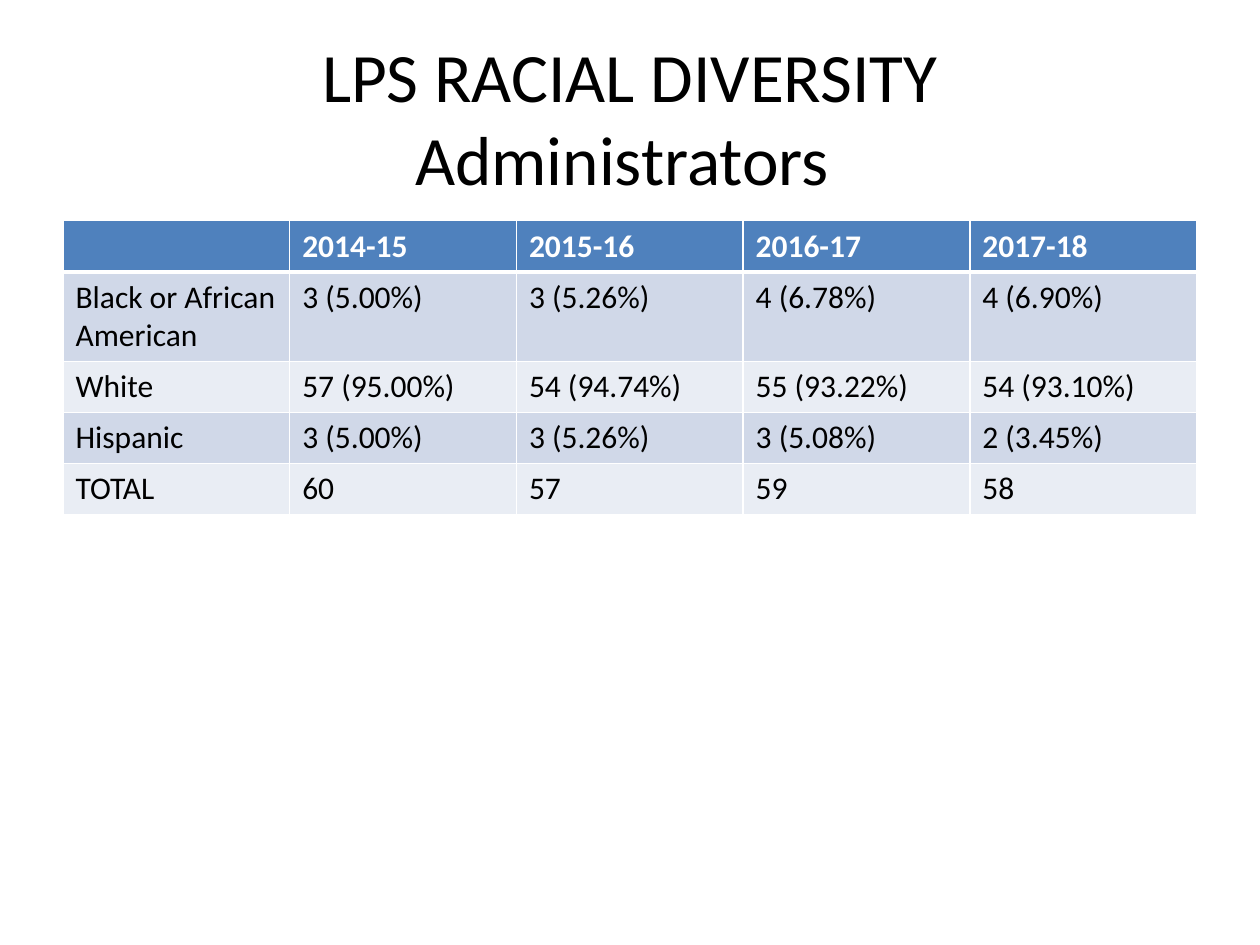
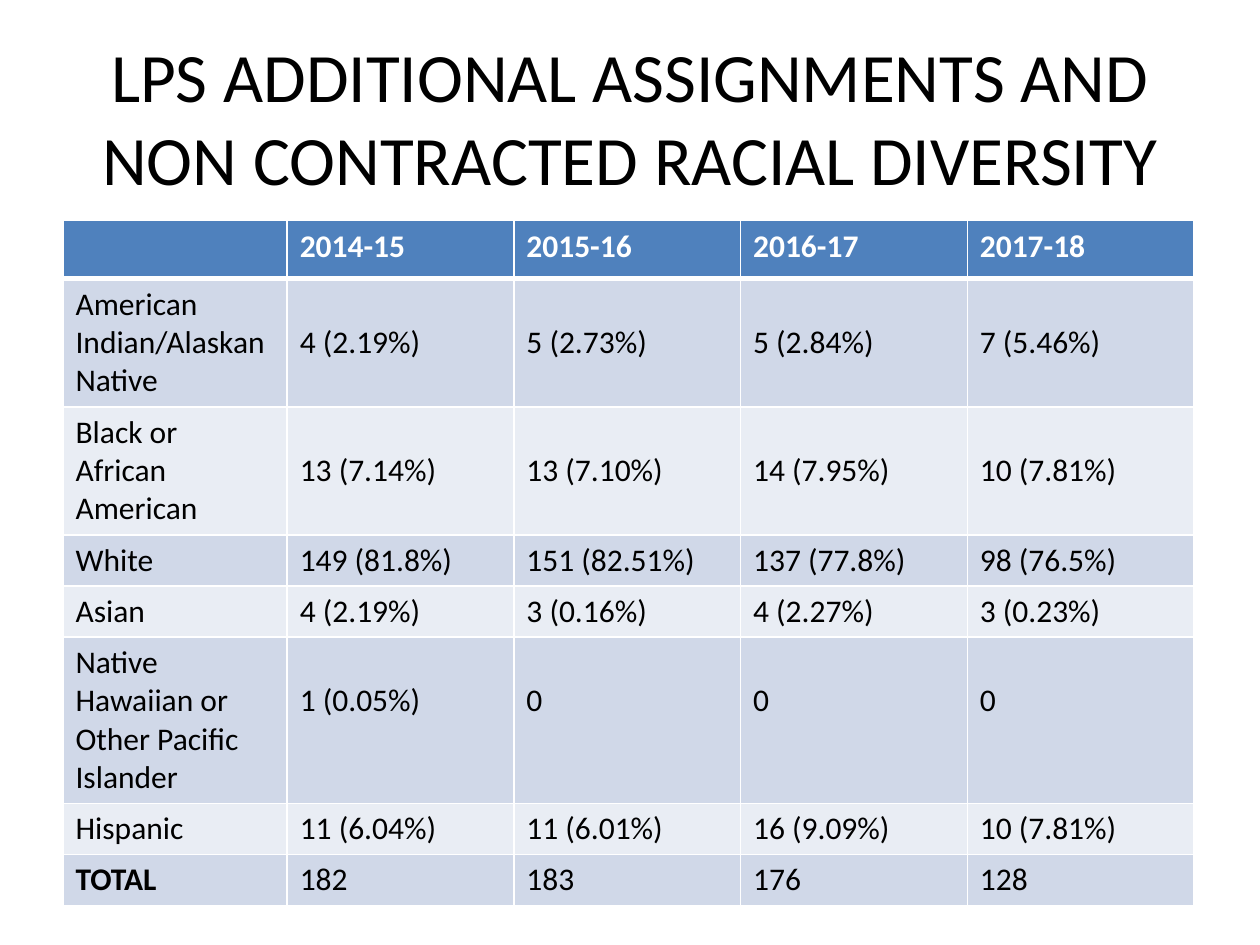
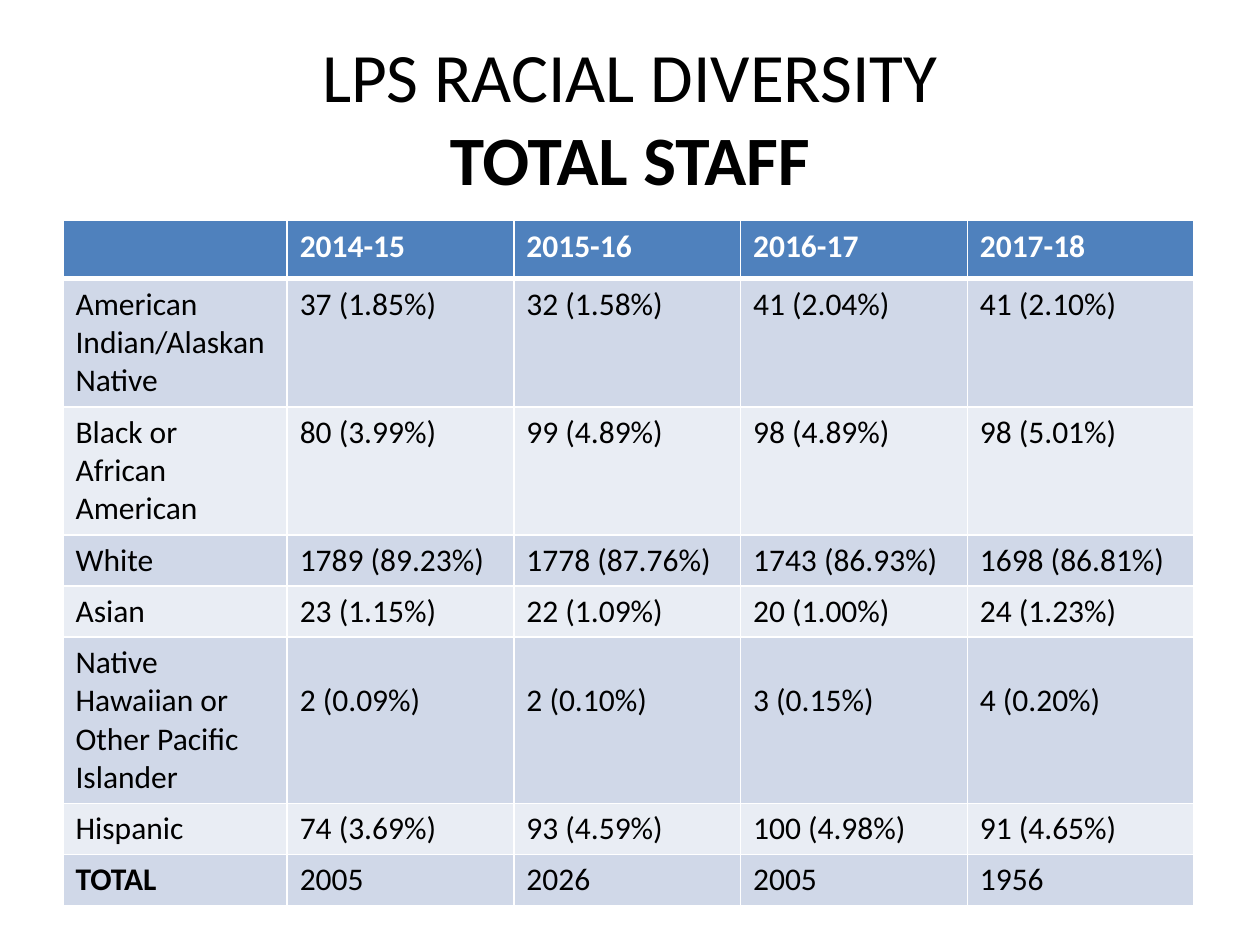
"""Build three slides of staff racial diversity tables."""
from dataclasses import dataclass

from lxml import etree
from pptx import Presentation
from pptx.dml.color import RGBColor
from pptx.enum.text import MSO_ANCHOR, MSO_AUTO_SIZE, PP_ALIGN
from pptx.oxml.ns import qn
from pptx.util import Cm, Pt


@dataclass(frozen=True)
class Theme:
    font: str = "Calibri"
    title_size: Pt = Pt(39.6)
    table_size: Pt = Pt(18)
    ink: RGBColor = RGBColor(0x00, 0x00, 0x00)
    white: RGBColor = RGBColor(0xFF, 0xFF, 0xFF)
    header: RGBColor = RGBColor(0x4F, 0x81, 0xBD)
    band_dark: RGBColor = RGBColor(0xD0, 0xD8, 0xE8)
    band_light: RGBColor = RGBColor(0xE9, 0xED, 0xF4)
    thin_rule: Pt = Pt(1)
    header_rule: Pt = Pt(3)


THEME = Theme()
YEARS = ["", "2014-15", "2015-16", "2016-17", "2017-18"]
NATIVE = "American Indian/Alaskan Native"
BLACK = "Black or African American"
PACIFIC = "Native Hawaiian or Other Pacific Islander"
LEFT = Cm(1.27)
TABLE_TOP = Cm(4.45)
YEAR_WIDTH = Cm(4.57)
ROW_HEIGHT = Cm(1.03)
SECOND_LINE_MARGIN = Cm(0.9)

SLIDES = [
    {
        "title": "LPS RACIAL DIVERSITY\vAdministrators ",
        "bold_title": "",
        "group_width": Cm(4.57),
        "header_height": ROW_HEIGHT,
        "lowered": [],
        "bold_total": False,
        "rows": [
            [BLACK, "3 (5.00%)", "3 (5.26%)", "4 (6.78%)", "4 (6.90%)"],
            ["White", "57 (95.00%)", "54 (94.74%)", "55 (93.22%)", "54 (93.10%)"],
            ["Hispanic", "3 (5.00%)", "3 (5.26%)", "3 (5.08%)", "2 (3.45%)"],
            ["TOTAL", "60", "57", "59", "58"],
        ],
    },
    {
        "title": "LPS ADDITIONAL ASSIGNMENTS AND NON CONTRACTED RACIAL DIVERSITY",
        "bold_title": "",
        "group_width": Cm(4.52),
        "header_height": Cm(1.17),
        "lowered": [NATIVE, BLACK, PACIFIC],
        "bold_total": True,
        "rows": [
            [NATIVE, "4 (2.19%)", "5 (2.73%)", "5 (2.84%)", "7 (5.46%)"],
            [BLACK, "13 (7.14%)", "13 (7.10%)", "14 (7.95%)", "10 (7.81%)"],
            ["White", "149 (81.8%)", "151 (82.51%)", "137 (77.8%)", "98 (76.5%)"],
            ["Asian", "4 (2.19%)", "3 (0.16%)", "4 (2.27%)", "3 (0.23%)"],
            [PACIFIC, "1 (0.05%)", "0", "0", "0"],
            ["Hispanic", "11 (6.04%)", "11 (6.01%)", "16 (9.09%)", "10 (7.81%)"],
            ["TOTAL", "182", "183", "176", "128"],
        ],
    },
    {
        "title": "LPS RACIAL DIVERSITY\v",
        "bold_title": "TOTAL STAFF",
        "group_width": Cm(4.52),
        "header_height": Cm(1.17),
        "lowered": [PACIFIC],
        "bold_total": True,
        "rows": [
            [NATIVE, "37 (1.85%)", "32 (1.58%)", "41 (2.04%)", "41 (2.10%)"],
            [BLACK, "80 (3.99%)", "99 (4.89%)", "98 (4.89%)", "98 (5.01%)"],
            ["White", "1789 (89.23%)", "1778 (87.76%)", "1743 (86.93%)", "1698 (86.81%)"],
            ["Asian", "23 (1.15%)", "22 (1.09%)", "20 (1.00%)", "24 (1.23%)"],
            [PACIFIC, "2 (0.09%)", "2 (0.10%)", "3 (0.15%)", "4 (0.20%)"],
            ["Hispanic", "74 (3.69%)", "93 (4.59%)", "100 (4.98%)", "91 (4.65%)"],
            ["TOTAL", "2005", "2026", "2005", "1956"],
        ],
    },
]


def style_font(font, size, color, bold=False):
    font.name = THEME.font
    font.size = size
    font.color.rgb = color
    font.bold = bold


def add_borders(cell, top, bottom):
    properties = cell._tc.get_or_add_tcPr()
    widths = {"L": THEME.thin_rule, "R": THEME.thin_rule, "T": top, "B": bottom}
    for side, width in widths.items():
        line = etree.SubElement(properties, qn(f"a:ln{side}"), w=str(int(width)))
        fill = etree.SubElement(line, qn("a:solidFill"))
        etree.SubElement(fill, qn("a:srgbClr"), val=str(THEME.white))


prs = Presentation()
prs.slide_width = Cm(25.4)
prs.slide_height = Cm(19.05)

for content in SLIDES:
    slide = prs.slides.add_slide(prs.slide_layouts[5])
    slide.background.fill.solid()
    slide.background.fill.fore_color.rgb = THEME.white

    title = slide.shapes.title
    title.left, title.top, title.width, title.height = LEFT, Cm(0.76), Cm(22.86), Cm(3.18)
    title.text_frame.text = content["title"]
    title.text_frame.auto_size = MSO_AUTO_SIZE.NONE
    title.text_frame.vertical_anchor = MSO_ANCHOR.MIDDLE
    heading = title.text_frame.paragraphs[0]
    heading.alignment = PP_ALIGN.CENTER
    style_font(heading.font, THEME.title_size, THEME.ink)
    if content["bold_title"]:
        staff_scope = heading.add_run()
        staff_scope.text = content["bold_title"]
        staff_scope.font.bold = True

    records = [YEARS] + content["rows"]
    widths = [content["group_width"]] + [YEAR_WIDTH] * 4
    heights = [content["header_height"]] + [ROW_HEIGHT] * len(content["rows"])
    diversity = slide.shapes.add_table(
        len(records), len(YEARS), LEFT, TABLE_TOP, sum(widths), sum(heights)
    ).table
    for column, width in zip(diversity.columns, widths):
        column.width = width
    for row, height in zip(diversity.rows, heights):
        row.height = height

    for r, record in enumerate(records):
        is_header = r == 0
        band = THEME.band_dark if r % 2 else THEME.band_light
        for c, value in enumerate(record):
            cell = diversity.cell(r, c)
            add_borders(
                cell,
                THEME.header_rule if r == 1 else THEME.thin_rule,
                THEME.header_rule if is_header else THEME.thin_rule,
            )
            cell.fill.solid()
            cell.fill.fore_color.rgb = THEME.header if is_header else band
            cell.text = value
            if c > 0 and record[0] in content["lowered"]:
                cell.margin_top = SECOND_LINE_MARGIN
            is_bold = is_header or (value == "TOTAL" and content["bold_total"])
            style_font(
                cell.text_frame.paragraphs[0].font,
                THEME.table_size,
                THEME.white if is_header else THEME.ink,
                is_bold,
            )

prs.save("out.pptx")
